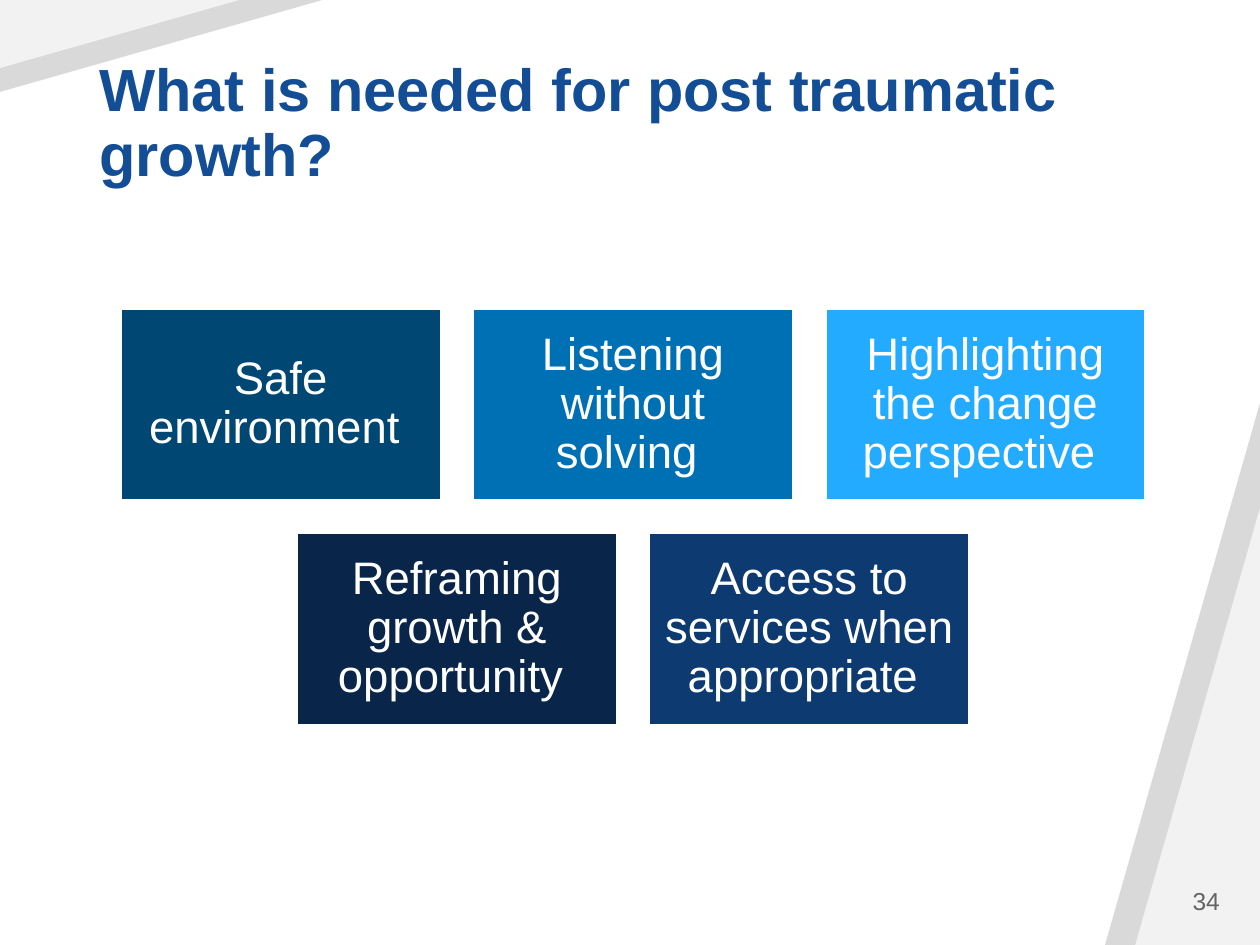
from pptx import Presentation
from pptx.dml.color import RGBColor
from pptx.enum.shapes import MSO_SHAPE
from pptx.enum.text import MSO_ANCHOR, MSO_AUTO_SIZE, PP_ALIGN
from pptx.util import Inches, Pt

FONT = "Arial"
WHITE = "FFFFFF"
BAND_GREY = "D9D9D9"
CORNER_GREY = "F2F2F2"
CARD_ROWS = [
    [("Safe environment ", "004773"),
     ("Listening without solving ", "0070B5"),
     ("Highlighting the change perspective ", "23ACFF")],
    [("Reframing growth & opportunity ", "09264A"),
     ("Access to services when appropriate ", "0D3A70")],
]


def colour(value):
    """Turn a hex string into a colour."""
    return RGBColor.from_string(value)


def write(shape, text, size, ink, align, anchor, bold=False, spacing=1.0, inset=0.1):
    """Write one formatted paragraph into a shape."""
    frame = shape.text_frame
    frame.word_wrap = True
    frame.auto_size = MSO_AUTO_SIZE.NONE
    frame.vertical_anchor = anchor
    frame.margin_left = frame.margin_right = Inches(inset)
    frame.margin_top = frame.margin_bottom = Inches(min(inset, 0.11) if inset > 0.1 else 0.05)
    para = frame.paragraphs[0]
    para.alignment = align
    para.line_spacing = spacing
    para.space_before = Pt(0)
    span = para.add_run()
    span.text = text
    span.font.name = FONT
    span.font.size = Pt(size)
    span.font.bold = bold
    span.font.color.rgb = colour(ink)


def add_corner(page, corner, width, height, fill):
    """Draw a right triangle from a corner, with signed side lengths."""
    x, y = corner
    builder = page.shapes.build_freeform(Inches(x), Inches(y))
    builder.add_line_segments([(Inches(x + width), Inches(y)),
                               (Inches(x), Inches(y + height))])
    triangle = builder.convert_to_shape()
    triangle.shadow.inherit = False
    triangle.fill.solid()
    triangle.fill.fore_color.rgb = colour(fill)
    triangle.line.fill.background()


def add_corners(page, width, height):
    """Decorate the top left and bottom right corners."""
    add_corner(page, (0, 0), 2.56, 0.73, BAND_GREY)
    add_corner(page, (0, 0), 1.9, 0.54, CORNER_GREY)
    add_corner(page, (width, height), -1.23, -4.3, BAND_GREY)
    add_corner(page, (width, height), -0.99, -3.47, CORNER_GREY)


def add_title(page, left, top, width, height):
    """Place and fill the title placeholder."""
    title = page.shapes.title
    title.left, title.top = Inches(left), Inches(top)
    title.width, title.height = Inches(width), Inches(height)
    write(title, "What is needed for post traumatic growth?", 34, "124D95",
          PP_ALIGN.LEFT, MSO_ANCHOR.BOTTOM, bold=True, spacing=0.9)


def add_cards(page, left, top, width, height, gap=0.26):
    """Lay out the rows of cards, each row centred in the box."""
    columns = max(len(row) for row in CARD_ROWS)
    card_width = (width - gap * (columns - 1)) / columns
    card_height = (height - gap * (len(CARD_ROWS) - 1)) / len(CARD_ROWS)
    for row_index, row in enumerate(CARD_ROWS):
        indent = (columns - len(row)) * (card_width + gap) / 2
        for column, (text, fill) in enumerate(row):
            card = page.shapes.add_shape(
                MSO_SHAPE.RECTANGLE,
                Inches(left + indent + column * (card_width + gap)),
                Inches(top + row_index * (card_height + gap)),
                Inches(card_width), Inches(card_height))
            card.shadow.inherit = False
            card.fill.solid()
            card.fill.fore_color.rgb = colour(fill)
            card.line.color.rgb = colour(WHITE)
            card.line.width = Pt(1)
            write(card, text, 26, WHITE, PP_ALIGN.CENTER, MSO_ANCHOR.MIDDLE,
                  spacing=0.9, inset=0.11)


def add_page_number(page, left, top, width, height):
    """Place the page number."""
    box = page.shapes.add_textbox(Inches(left), Inches(top), Inches(width), Inches(height))
    write(box, "34", 14, "646464", PP_ALIGN.RIGHT, MSO_ANCHOR.MIDDLE)


def main():
    """Build and save the deck."""
    deck = Presentation()
    deck.slide_width, deck.slide_height = Inches(10), Inches(7.5)
    page = deck.slides.add_slide(deck.slide_layouts[5])
    add_corners(page, 10, 7.5)
    add_title(page, 0.69, 0.4, 8.7, 1.15)
    add_cards(page, 0.96, 2.45, 8.13, 3.3)
    add_page_number(page, 8.96, 6.95, 0.82, 0.4)
    deck.save("out.pptx")


if __name__ == "__main__":
    main()
